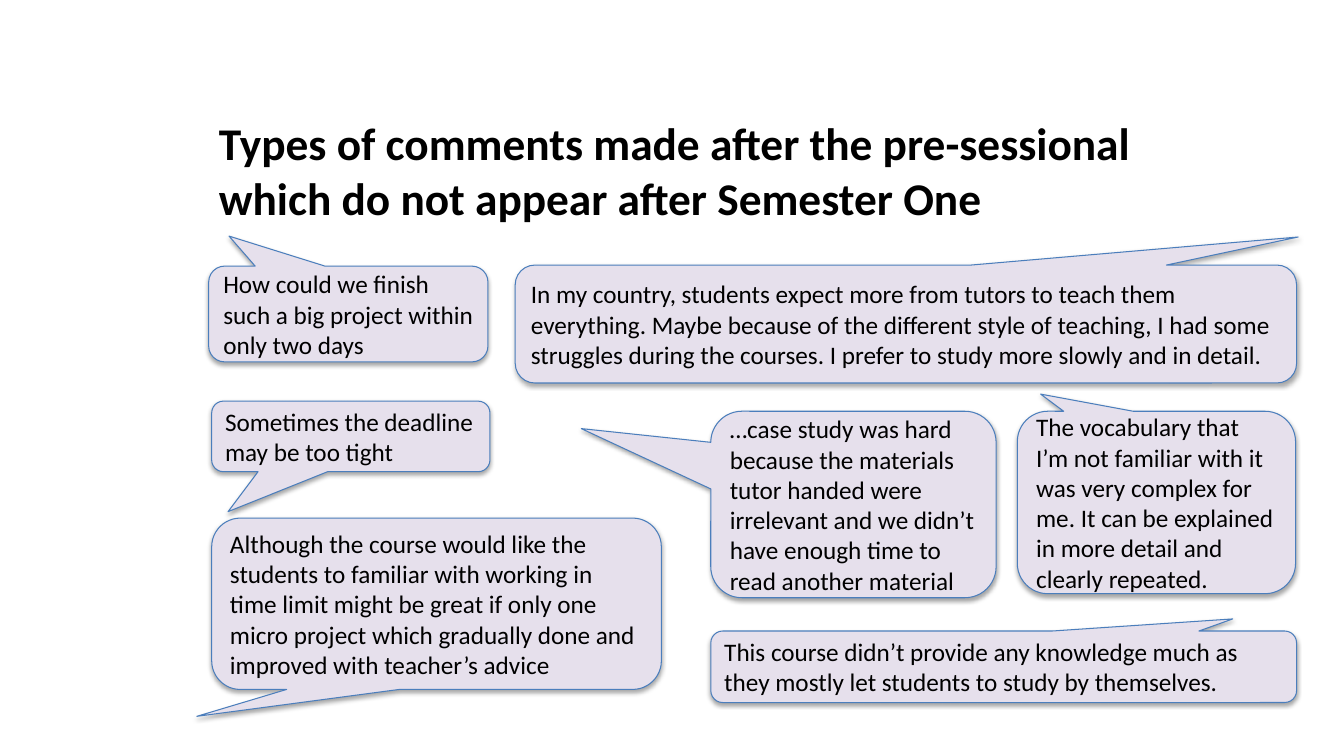
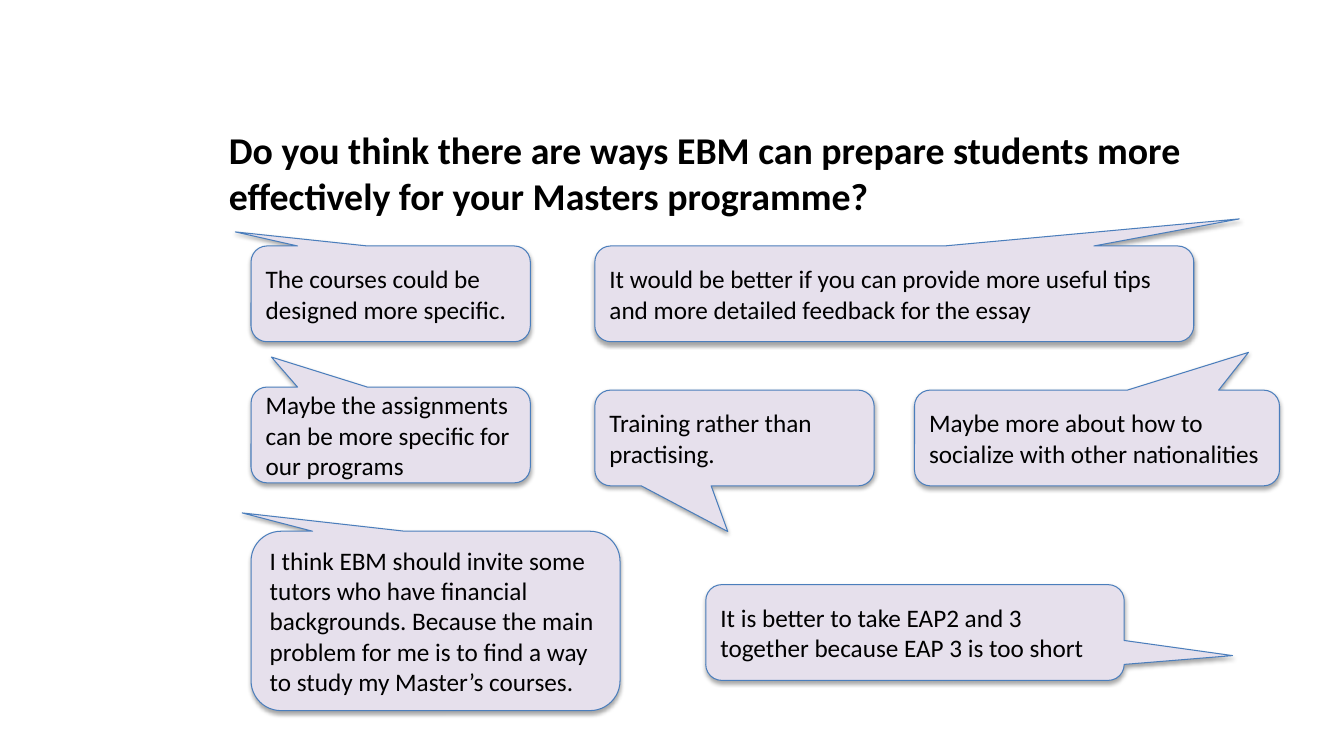
"""Build two slides of student comments in speech bubbles."""
from lxml import etree
from pptx import Presentation
from pptx.dml.color import RGBColor
from pptx.enum.shapes import MSO_SHAPE
from pptx.enum.text import MSO_ANCHOR, MSO_AUTO_SIZE, PP_ALIGN
from pptx.oxml import parse_xml
from pptx.oxml.ns import nsdecls
from pptx.util import Inches, Pt

CALLOUT = MSO_SHAPE.ROUNDED_RECTANGULAR_CALLOUT
MIDDLE = MSO_ANCHOR.MIDDLE
NO_FIT = MSO_AUTO_SIZE.NONE
LEFT = PP_ALIGN.LEFT

COLORS = {"text": "000000", "bubble": "E6E0EC", "outline": "4B7EBC", "shadow": "000000"}
FONT = "Calibri"
TITLE_ONLY = 5
CORNER = 0.167
SHADOW = (
    f'<a:effectLst {nsdecls("a")}>'
    '<a:outerShdw blurRad="40000" dist="23000" dir="5400000" rotWithShape="0">'
    f'<a:srgbClr val="{COLORS["shadow"]}"><a:alpha val="35000"/></a:srgbClr>'
    "</a:outerShdw></a:effectLst>"
)

SLIDES = [
    {
        "title": "Types of comments made after the pre-sessional which do not appear after Semester One",
        "title_box": (2.07, 1.14, 9.25, 1.09),
        "title_size": 32.4,
        "bubbles": [
            ((10.09, 4.08, 2.76, 1.81), (-0.416, -0.594),
             "The vocabulary that I’m not familiar with it was very complex for me. "
             "It can be explained in more detail and clearly repeated."),
            ((5.11, 2.63, 7.75, 1.17), (0.502, -0.738),
             "In my country, students expect more from tutors to teach them everything. "
             "Maybe because of the different style of teaching, I had some struggles "
             "during the courses. I prefer to study more slowly and in detail."),
            ((7.05, 4.08, 2.83, 1.85), (-0.954, -0.407),
             "…case study was hard because the materials tutor handed were irrelevant "
             "and we didn’t have enough time to read another material"),
            ((7.05, 6.26, 5.81, 0.71), (0.391, -0.669),
             "This course didn’t provide any knowledge much as they mostly let students "
             "to study by themselves."),
            ((2.1, 5.14, 4.46, 1.7), (-0.533, 0.657),
             "Although the course would like the students to familiar with working in "
             "time limit might be great if only one micro project which gradually done "
             "and improved with teacher’s advice"),
            ((2.1, 3.98, 2.76, 0.7), (-0.441, 1.066),
             "Sometimes the deadline may be too tight"),
            ((2.07, 2.64, 2.77, 0.95), (-0.427, -0.814),
             "How could we finish such a big project within only two days"),
        ],
    },
    {
        "title": "Do you think there are ways EBM can prepare students more effectively "
                 "for your Masters programme?",
        "title_box": (2.17, 1.1, 10.19, 1.22),
        "title_size": 27,
        "bubbles": [
            ((2.49, 2.44, 2.77, 0.95), (-0.556, -0.647),
             "The courses could be designed more specific."),
            ((5.9, 3.87, 2.77, 0.95), (-0.024, 0.977),
             "Training rather than practising."),
            ((2.49, 5.27, 3.66, 1.78), (-0.524, -0.602),
             "I think EBM should invite some tutors who have financial backgrounds. "
             "Because the main problem for me is to find a way to study my Master’s courses."),
            ((2.49, 3.84, 2.77, 0.95), (-0.427, -0.814),
             "Maybe the assignments can be more specific for our programs"),
            ((7, 5.8, 4.15, 0.95), (0.759, 0.241),
             "It is better to take EAP2 and 3 together because EAP 3 is too short"),
            ((5.9, 2.44, 5.94, 0.95), (0.576, -0.783),
             "It would be better if you can provide more useful tips and more detailed "
             "feedback for the essay"),
            ((9.07, 3.87, 3.62, 0.95), (0.415, -0.894),
             "Maybe more about how to socialize with other nationalities"),
        ],
    },
]


def write_text(shape, text, size, bold=False):
    frame = shape.text_frame
    frame.text = text
    frame.word_wrap = True
    frame.auto_size = NO_FIT
    frame.vertical_anchor = MIDDLE
    para = frame.paragraphs[0]
    para.alignment = LEFT
    para.font.name = FONT
    para.font.size = Pt(size)
    para.font.bold = bold
    para.font.color.rgb = RGBColor.from_string(COLORS["text"])


def add_bubble(page, box, tail, text):
    bubble = page.shapes.add_shape(CALLOUT, *map(Inches, box))
    for index, value in enumerate((*tail, CORNER)):
        bubble.adjustments[index] = value
    bubble.fill.solid()
    bubble.fill.fore_color.rgb = RGBColor.from_string(COLORS["bubble"])
    bubble.line.color.rgb = RGBColor.from_string(COLORS["outline"])
    bubble.line.width = Pt(0.75)
    etree.ElementBase.append(bubble.element.spPr, parse_xml(SHADOW))
    write_text(bubble, text, 18)


deck = Presentation()
deck.slide_width = Inches(13.33)
deck.slide_height = Inches(7.5)

for content in SLIDES:
    page = deck.slides.add_slide(deck.slide_layouts[TITLE_ONLY])
    title = page.shapes.title
    title.left, title.top, title.width, title.height = map(Inches, content["title_box"])
    write_text(title, content["title"], content["title_size"], bold=True)
    for box, tail, text in content["bubbles"]:
        add_bubble(page, box, tail, text)

deck.save("out.pptx")
